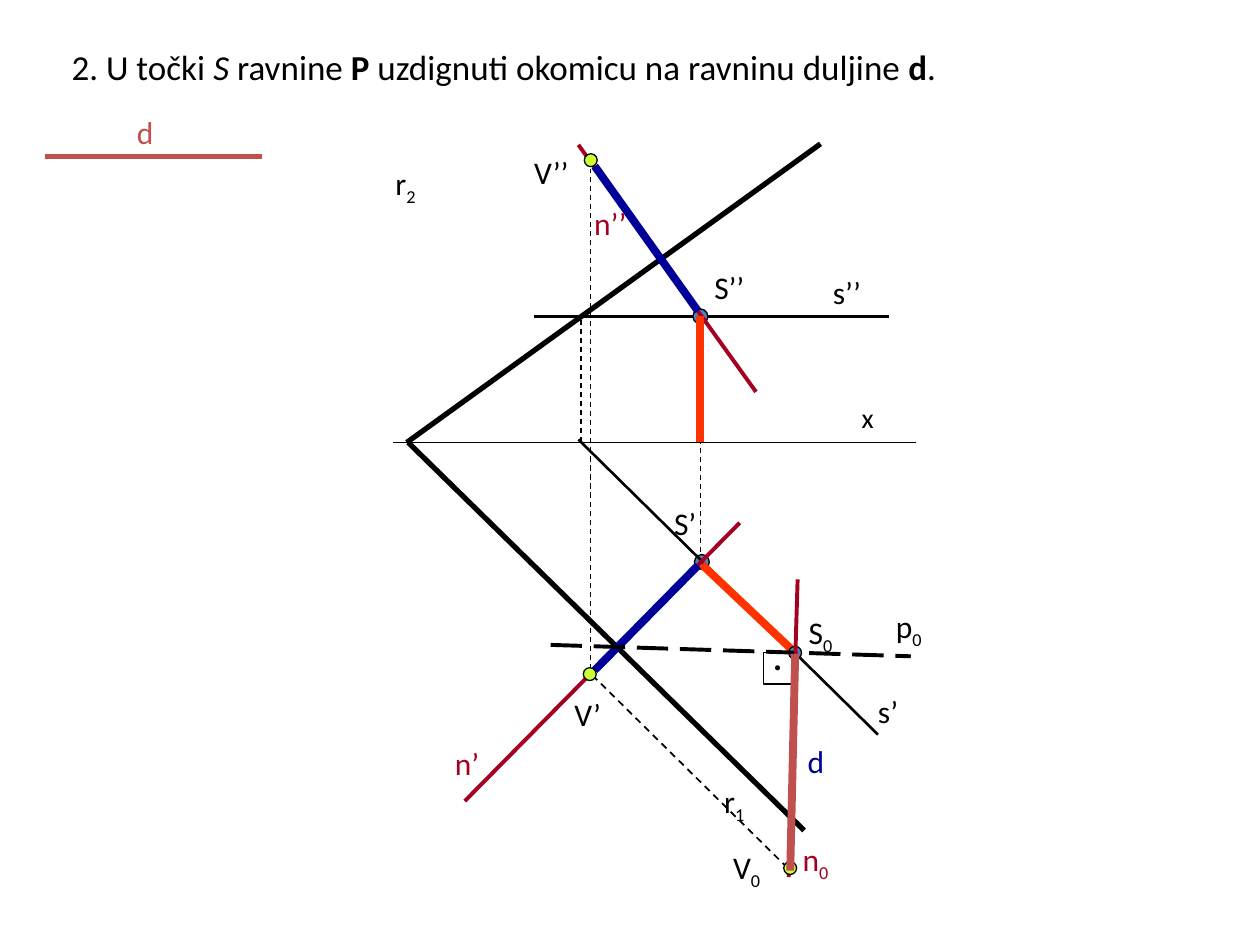
import pptx
import pptx.dml.color
import pptx.enum.dml
import pptx.enum.shapes
import pptx.enum.text
import pptx.oxml.ns
import pptx.util
import lxml.etree

Cm, Pt = pptx.util.Cm, pptx.util.Pt
RGBColor = pptx.dml.color.RGBColor
SHAPE = pptx.enum.shapes.MSO_SHAPE
DASH = pptx.enum.dml.MSO_LINE.DASH
LONG_DASH = pptx.enum.dml.MSO_LINE.LONG_DASH

FONT = "Calibri"
BLACK = RGBColor(0x00, 0x00, 0x00)
NORMAL_RED = RGBColor(0xA5, 0x00, 0x21)
LENGTH_RED = RGBColor(0xC0, 0x50, 0x4D)
HEIGHT_ORANGE = RGBColor(0xFF, 0x33, 0x00)
SEGMENT_BLUE = RGBColor(0x00, 0x00, 0x99)
POINT_BLUE = RGBColor(0x4F, 0x81, 0xBD)
POINT_GREEN = RGBColor(0xCC, 0xFF, 0x33)


def add_line(slide, box, start, end, color=BLACK, width=0.75, dash=None):
    """Draw a straight line between two points of the box."""
    left, top = box
    line = slide.shapes.add_connector(
        pptx.enum.shapes.MSO_CONNECTOR.STRAIGHT,
        Cm(left + start[0]), Cm(top + start[1]),
        Cm(left + end[0]), Cm(top + end[1]))
    line.line.color.rgb = color
    line.line.width = Pt(width)
    if dash is not None:
        line.line.dash_style = dash
    properties = line._element.find(pptx.oxml.ns.qn("p:spPr"))
    lxml.etree.SubElement(properties, pptx.oxml.ns.qn("a:effectLst"))


def add_outlined(slide, box, kind, corner, size, fill=None):
    """Draw a thinly outlined shape with its top left corner in the box."""
    shape = slide.shapes.add_shape(
        kind, Cm(box[0] + corner[0]), Cm(box[1] + corner[1]),
        Cm(size[0]), Cm(size[1]))
    shape.shadow.inherit = False
    if fill is None:
        shape.fill.background()
    else:
        shape.fill.solid()
        shape.fill.fore_color.rgb = fill
    shape.line.color.rgb = BLACK
    shape.line.width = Pt(0.75)


def add_point(slide, box, center, fill, diameter=0.26):
    """Mark a point of the construction with a small disc."""
    corner = [value - diameter / 2 for value in center]
    add_outlined(slide, box, SHAPE.OVAL, corner, (diameter, diameter), fill)


def add_label(slide, box, corner, width, name, index="", color=BLACK,
              size=18, height=1.02):
    """Write a name with an optional subscript index."""
    label = slide.shapes.add_textbox(
        Cm(box[0] + corner[0]), Cm(box[1] + corner[1]), Cm(width), Cm(height))
    label.text_frame.word_wrap = True
    paragraph = label.text_frame.paragraphs[0]
    for text in filter(None, (name, index)):
        run = paragraph.add_run()
        run.text = text
        run.font.name = FONT
        run.font.size = Pt(size)
        run.font.color.rgb = color
    if index:
        run._r.get_or_add_rPr().set("baseline", "-25000")


def add_task(slide, box):
    """Write the task in the title placeholder."""
    task = slide.shapes.title
    task.left, task.top, task.width, task.height = map(Cm, box)
    frame = task.text_frame
    frame.auto_size = pptx.enum.text.MSO_AUTO_SIZE.NONE
    frame.vertical_anchor = pptx.enum.text.MSO_ANCHOR.TOP
    frame.word_wrap = True
    paragraph = frame.paragraphs[0]
    paragraph.alignment = pptx.enum.text.PP_ALIGN.LEFT
    for text in ("2. U točki ", "S", " ravnine ", "P",
                 " uzdignuti okomicu na ravninu duljine ", "d", "."):
        run = paragraph.add_run()
        run.text = text
        run.font.name = FONT
        run.font.size = Pt(20)
        run.font.color.rgb = BLACK
        run.font.italic = text == "S"
        run.font.bold = text in ("P", "d")


def add_given_length(slide, box):
    """Draw the given length d."""
    add_line(slide, box, (0, 1.05), (4.38, 1.05), LENGTH_RED, 3)
    add_label(slide, box, (1.61, 0.06), 1.42, "d", color=LENGTH_RED)


def add_front_view(slide, box):
    """Draw the second projection above the x axis."""
    axis, height = 6.02, 3.48
    s_point, v_x = (6.42, height), 4.21
    add_line(slide, box, (0.22, axis), (10.77, axis))
    add_line(slide, box, (8.84, 0), (0.5, axis), width=3)
    add_label(slide, box, (9.42, 5.05), 1.27, "x", size=16, height=0.94)
    add_label(slide, box, (0.02, 0.28), 1.65, "r", "2")
    add_line(slide, box, (4.01, axis), (4.01, height), dash=DASH)
    add_line(slide, box, (3.07, height), (10.23, height), width=1.5)
    add_label(slide, box, (8.84, 2.48), 1.45, "s’’")
    add_point(slide, box, s_point, POINT_BLUE, 0.3)
    add_line(slide, box, (6.42, 8.23), s_point, dash=DASH)
    add_label(slide, box, (6.45, 2.38), 1.3, "S’’")
    add_line(slide, box, (7.54, 5), (3.96, 0.02), NORMAL_RED, 2.25)
    add_label(slide, box, (4.03, 1.09), 1.35, "n’’", color=NORMAL_RED)
    add_line(slide, box, s_point, (6.42, axis), HEIGHT_ORANGE, 4.5)
    add_point(slide, box, (v_x, 0.33), POINT_GREEN)
    add_line(slide, box, (v_x, 10.59), (v_x, 0.5), dash=DASH)
    add_label(slide, box, (2.82, 0.07), 1.42, "V’’")
    add_line(slide, box, (4.29, 0.45), (6.37, 3.37), SEGMENT_BLUE, 4.5)


def add_top_view(slide, box):
    """Draw the first projection below the x axis."""
    add_line(slide, box, (0.03, 0.02), (8.01, 7.84), width=3)
    add_label(slide, box, (6.15, 6.75), 1.35, "r", "1")
    add_point(slide, box, (5.95, 2.43), POINT_BLUE, 0.3)
    add_label(slide, box, (5.14, 1.13), 1.6, "S’")
    add_line(slide, box, (3.46, -0.04), (9.5, 5.91), width=1.5)
    add_label(slide, box, (9.25, 4.92), 1.02, "s’")
    add_line(slide, box, (1.17, 7.25), (6.71, 1.64), NORMAL_RED, 2.25)
    add_label(slide, box, (0.72, 5.98), 1.3, "n’", color=NORMAL_RED)
    add_line(slide, box, (5.95, 2.48), (7.83, 4.26), HEIGHT_ORANGE, 4.5)
    add_line(slide, box, (3.74, 4.71), (7.68, 8.6), width=1, dash=DASH)
    add_point(slide, box, (3.69, 4.69), POINT_GREEN)
    add_label(slide, box, (3.13, 4.99), 1.32, "V’")
    add_line(slide, box, (5.87, 2.5), (3.79, 4.61), SEGMENT_BLUE, 4.5)


def add_folded_view(slide, box):
    """Draw the normal folded down in its true length."""
    add_point(slide, box, (4.93, 1.56), POINT_BLUE)
    add_label(slide, box, (4.95, 0.64), 1.17, "S", "0")
    add_line(slide, box, (0, 1.4), (7.26, 1.63), width=2.25, dash=LONG_DASH)
    add_label(slide, box, (6.71, 0.52), 1.2, "p", "0")
    add_line(slide, box, (4.8, 6.08), (4.98, 0.08), NORMAL_RED, 2.25)
    add_label(slide, box, (4.83, 5.21), 1.3, "n", "0", NORMAL_RED)
    add_outlined(slide, box, SHAPE.RECTANGLE, (4.29, 1.56), (0.61, 0.63))
    add_label(slide, box, (4.22, 0.95), 0.84, ".", size=24, height=1.27)
    add_point(slide, box, (4.83, 5.9), POINT_GREEN)
    add_label(slide, box, (3.43, 5.37), 1.3, "V", "0")
    add_line(slide, box, (4.93, 1.58), (4.83, 5.95), LENGTH_RED, 4.5)
    add_label(slide, box, (4.93, 3.23), 1.2, "d", color=SEGMENT_BLUE)


def main():
    """Build the slide and save it."""
    deck = pptx.Presentation()
    deck.slide_width, deck.slide_height = Cm(25.4), Cm(19.05)
    slide = deck.slides.add_slide(deck.slide_layouts.get_by_name("Title Only"))
    add_task(slide, (1.19, 0.79, 18.06, 1.12))
    add_given_length(slide, (0.9, 2.1))
    add_front_view(slide, (7.7, 2.9))
    add_top_view(slide, (8.2, 8.9))
    add_folded_view(slide, (11.1, 11.6))
    deck.save("out.pptx")


if __name__ == "__main__":
    main()
